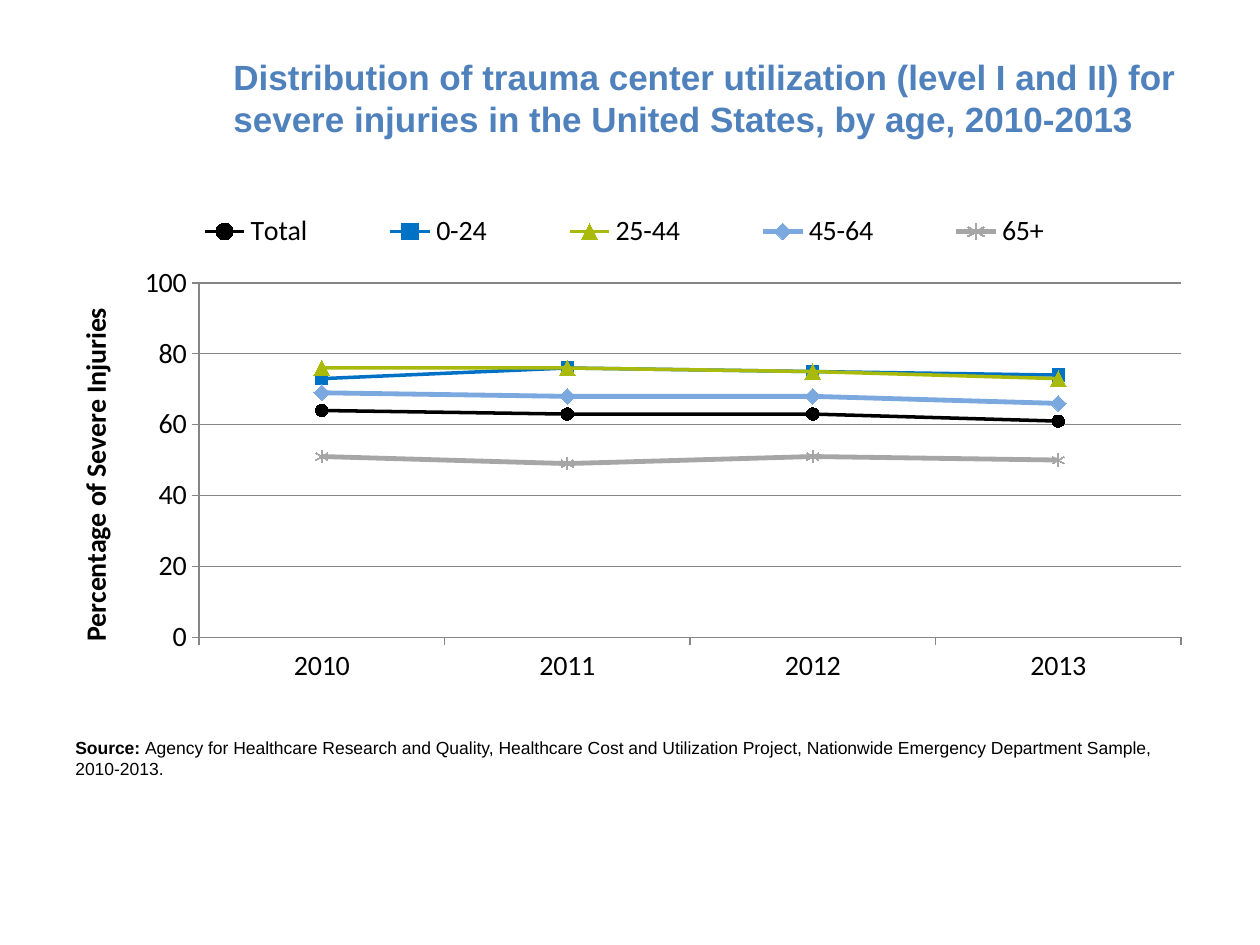
"""Build a slide with a line chart of trauma center utilization by age."""
from lxml import etree
from pptx import Presentation
from pptx import util as u
from pptx.chart.data import CategoryChartData
from pptx.dml.color import RGBColor
from pptx.enum import chart as ch, text
from pptx.oxml.ns import qn

TITLE = ("Distribution of trauma center utilization (level I and II) for "
         "severe injuries in the United States, by age, 2010-2013")
SOURCE = ("Agency for Healthcare Research and Quality, Healthcare Cost and Utilization "
          "Project, Nationwide Emergency Department Sample, 2010-2013.")
AXIS_TITLE = "Percentage of Severe Injuries"
YEARS = ["2010", "2011", "2012", "2013"]
SERIES = [
    ("Total", (64, 63, 63, 61), "000000", 2, "CIRCLE", 7),
    ("0-24", (73, 76, 75, 74), "0072C6", 2, "SQUARE", 7),
    ("25-44", (76, 76, 75, 73), "AABA0A", 2, "TRIANGLE", 9),
    ("45-64", (69, 68, 68, 66), "7BA8DF", 2.75, "DIAMOND", 9),
    ("65+", (51, 49, 51, 50), "A6A6A6", 2.75, "STAR", 7),
]
PLOT_BOX = (0.12, 0.162, 0.866, 0.703)
LEGEND_BOX = (0.06, 0.01, 0.87, 0.1)


def rgb(code):
    return RGBColor.from_string(code)


def style(font, size, name="Calibri", color="000000", bold=False):
    font.size, font.name, font.bold = u.Pt(size), name, bold
    font.color.rgb = rgb(color)


def add_text(p, content, **fmt):
    r = p.add_run()
    r.text = content
    style(r.font, **fmt)


def place(sp, left, top, width, height):
    sp.left, sp.top, sp.width, sp.height = map(u.Cm, (left, top, width, height))


def set_layout(parent, index, box, inner=False):
    for old in parent.findall(qn("c:layout")):
        parent.remove(old)
    layout = etree.Element(qn("c:layout"))
    manual = etree.SubElement(layout, qn("c:manualLayout"))
    items = [("layoutTarget", "inner")] if inner else []
    items += [("xMode", "edge"), ("yMode", "edge"), *zip("xywh", box)]
    for tag, val in items:
        etree.SubElement(manual, qn(f"c:{tag}")).set("val", str(val))
    parent.insert(index, layout)


def add_line_chart(s):
    data = CategoryChartData(number_format="0")
    data.categories = YEARS
    for name, values, *_ in SERIES:
        data.add_series(name, values)
    box = map(u.Cm, (1.27, 4.06, 22.86, 10.16))
    chart = s.shapes.add_chart(ch.XL_CHART_TYPE.LINE_MARKERS, *box, data).chart
    style(chart.font, 10, "Arial")
    chart.has_title = False
    chart.plots[0].vary_by_categories = False
    for line, (_, _, color, width, marker, size) in zip(chart.plots[0].series, SERIES):
        line.smooth = False
        line.format.line.color.rgb = rgb(color)
        line.format.line.width = u.Pt(width)
        mark = line.marker
        mark.style, mark.size = ch.XL_MARKER_STYLE[marker], size
        mark.format.line.color.rgb = rgb(color)
        if marker == "STAR":
            mark.format.fill.background()
        else:
            mark.format.fill.solid()
            mark.format.fill.fore_color.rgb = rgb(color)

    val = chart.value_axis
    val.minimum_scale, val.maximum_scale, val.major_unit = 0, 100, 20
    val.has_major_gridlines = True
    val.tick_labels.number_format = "0"
    val.tick_labels.number_format_is_linked = False
    add_text(val.axis_title.text_frame.paragraphs[0], AXIS_TITLE, size=16, bold=True)
    for axis in (val, chart.category_axis):
        axis.major_tick_mark = ch.XL_TICK_MARK.OUTSIDE
        style(axis.tick_labels.font, 16)
        axis.format.line.color.rgb = rgb("868686")
    val.major_gridlines.format.line.color.rgb = rgb("868686")

    chart.has_legend = True
    legend = chart.legend
    legend.position = ch.XL_LEGEND_POSITION.TOP
    legend.include_in_layout = False
    style(legend.font, 16)
    area = chart.plots[0]._element.getparent()
    set_layout(area, 0, PLOT_BOX, inner=True)
    set_layout(area.getparent().find(qn("c:legend")), 1, LEGEND_BOX)


def main():
    prs = Presentation()
    prs.slide_width, prs.slide_height = u.Cm(25.4), u.Cm(19.05)
    s = prs.slides.add_slide(prs.slide_layouts[5])

    title = s.shapes.title
    place(title, 4.45, 0.76, 19.69, 2.41)
    tf = title.text_frame
    tf.vertical_anchor = text.MSO_ANCHOR.MIDDLE
    tf.paragraphs[0].alignment = text.PP_ALIGN.LEFT
    add_text(tf.paragraphs[0], TITLE, size=20, name="Arial", color="4F81BD", bold=True)

    add_line_chart(s)

    tf = s.shapes.add_textbox(*map(u.Cm, (1.27, 14.73, 22.86, 1.12))).text_frame
    tf.word_wrap = True
    add_text(tf.paragraphs[0], "Source: ", size=10, name="Arial", bold=True)
    add_text(tf.paragraphs[0], SOURCE, size=10, name="Arial")
    prs.save("out.pptx")


if __name__ == "__main__":
    main()
